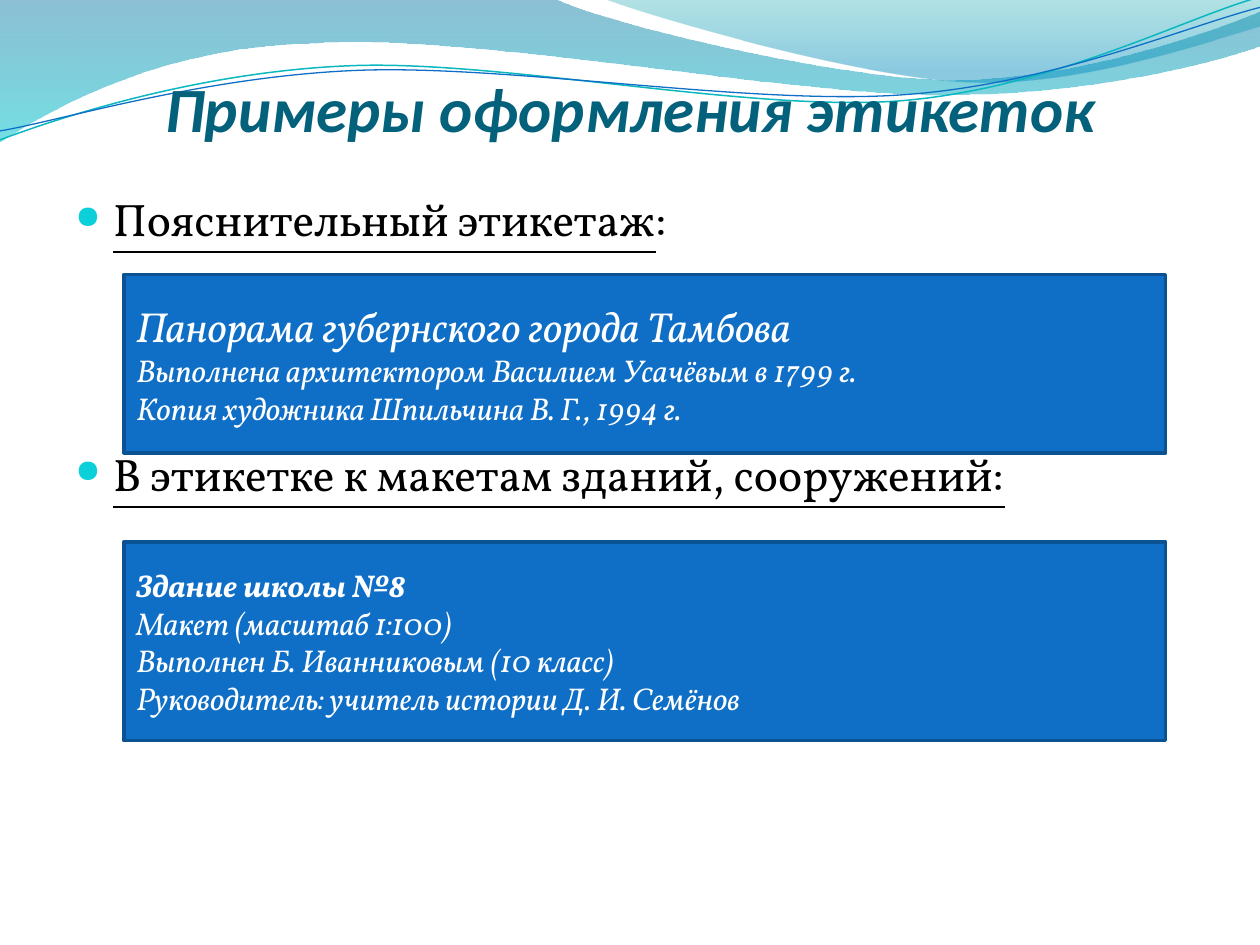
from lxml.etree import SubElement
from pptx import Presentation
from pptx.dml.color import RGBColor
from pptx.enum.shapes import MSO_SHAPE
from pptx.enum.text import MSO_ANCHOR, PP_ALIGN
from pptx.oxml.ns import qn
from pptx.oxml.xmlchemy import OxmlElement
from pptx.util import Cm, Pt

WHITE = RGBColor(0xFF, 0xFF, 0xFF)
BLACK = RGBColor(0x00, 0x00, 0x00)
TITLE = RGBColor(0x04, 0x61, 0x7B)
BLUE = RGBColor(0x0F, 0x6F, 0xC6)
NAVY = RGBColor(0x0B, 0x52, 0x92)
TEAL = RGBColor(0x0A, 0xB8, 0xBF)
DEEP = RGBColor(0x00, 0x74, 0xA1)
CYAN = RGBColor(0x00, 0xC6, 0xCF)
SEA = RGBColor(0x00, 0xA1, 0xA9)
SKY = RGBColor(0x00, 0x8B, 0xBF)
DOT = RGBColor(0x0B, 0xD0, 0xD9)
SERIF = "Vollkorn"
TILT = 357.3

WAVES = [
    ([(0, 0), (11.18, -0.03), (12.09, 0.43, 16.87, 1.6, 19.25, 1.6),
      (21.67, 1.6, 24.33, 0.66, 25.4, 0.23), (25.43, 0.91),
      (24.97, 1.12, 22.1, 1.93, 18.95, 1.91), (15.8, 1.91, 9.7, 0.71, 6.53, 0.86),
      (3.28, 0.91, 1.17, 2.11, -0.03, 2.87), (0, 0)],
     [(0, DEEP, 45), (1, CYAN, 55)]),
    ([(12.17, -0.03), (12.93, 0.28, 17.32, 1.57, 19.53, 1.65),
      (21.74, 1.75, 24.41, 0.81, 25.4, 0.53), (25.4, 0), (12.17, -0.03)],
     [(0, SEA, 30), (0.8, SKY, 45)]),
]
CURVES = [
    ([(-0.05, 2.22), (1.19, 1.82, 4.02, 1.04, 7.05, 1.06),
      (10.05, 1.07, 15.02, 2.37, 18.08, 2.29), (21.13, 2.2, 23.87, 0.91, 25.41, 0.55)],
     TEAL, 0.85),
    ([(-0.04, 2.04), (1.16, 1.9, 4.1, 1.14, 7.2, 1.16),
      (10.25, 1.18, 15.13, 2.25, 18.18, 2.17), (21.21, 2.1, 23.93, 1.06, 25.45, 0.75)],
     BLUE, 0.75),
]
TOPICS = [
    (0, [("Пояснительный этикетаж", True), (":", False)]),
    (114.5, [("В этикетке к макетам зданий, сооружений:", True)]),
]
SCHOOL = [
    ("Здание школы №8", 18, True),
    ("Макет (масштаб 1:100)", 18, False),
    ("Выполнен Б. Иванниковым (10 класс)", 18, False),
    ("Руководитель: учитель истории Д. И. Семёнов", 18, False),
]
TOWN = [
    ("Панорама губернского города Тамбова", 24, False),
    ("Выполнена архитектором Василием Усачёвым в 1799 г.", 18, False),
    ("Копия художника Шпильчина В. Г., 1994 г.", 18, False),
]


def outline(slide, left, top, segs, close):
    """Draw one freeform of lines and cubic curves from the given corner."""
    dots = [(Cm(left + seg[i]), Cm(top + seg[i + 1]))
            for seg in segs for i in range(0, len(seg), 2)]
    pen = slide.shapes.build_freeform(*dots[0])
    pen.add_line_segments(dots[1:], close=close)
    shape = pen.convert_to_shape()
    shape.shadow.inherit = False
    lines = iter(list(shape.element.iter(qn("a:lnTo"))))
    for seg in segs[1:]:
        group = [next(lines) for _ in range(len(seg) // 2)]
        if len(group) == 3:
            curve = OxmlElement("a:cubicBezTo")
            group[0].addprevious(curve)
            for line in group:
                curve.append(line[0])
                line.getparent().remove(line)
    return shape


def add_waves(slide, left, top):
    """Place the tinted waves and the thin curves of the header."""
    for segs, stops in WAVES:
        shape = outline(slide, left, top, segs, True)
        shape.line.fill.background()
        shape.fill.gradient()
        shape.fill.gradient_angle = 270
        for stop, (place, color, _) in zip(shape.fill.gradient_stops, stops):
            stop.position = place
            stop.color.rgb = color
        tints = list(shape.element.spPr.iter(qn("a:srgbClr")))
        for tint, (_, _, alpha) in zip(tints, stops):
            SubElement(tint, qn("a:alpha"), val=str(alpha * 1000))
    for segs, color, width in CURVES:
        shape = outline(slide, left, top, segs, False)
        shape.rotation = TILT
        shape.fill.background()
        shape.line.color.rgb = color
        shape.line.width = Pt(width)


def add_run(para, text, size, color, font=SERIF):
    """Append a run and return its font."""
    run = para.add_run()
    run.text = text
    run.font.name = font
    run.font.size = Pt(size)
    run.font.color.rgb = color
    return run.font


def add_title(slide, left, top, width, height):
    """Place the centred heading."""
    frame = slide.shapes.add_textbox(Cm(left), Cm(top), Cm(width), Cm(height)).text_frame
    frame.word_wrap = True
    frame.vertical_anchor = MSO_ANCHOR.BOTTOM
    frame.margin_left = frame.margin_right = frame.margin_bottom = 0
    para = frame.paragraphs[0]
    para.alignment = PP_ALIGN.CENTER
    font = add_run(para, "Примеры оформления этикеток", 36, TITLE, "Calibri")
    font.bold = font.italic = True


def add_topics(slide, left, top, width, height):
    """Place the bulleted topics, spaced to leave room for the labels."""
    frame = slide.shapes.add_textbox(Cm(left), Cm(top), Cm(width), Cm(height)).text_frame
    frame.word_wrap = True
    for i, (gap, runs) in enumerate(TOPICS):
        para = frame.add_paragraph() if i else frame.paragraphs[0]
        para.space_before = Pt(gap)
        props = para._p.get_or_add_pPr()
        props.set("marL", str(Cm(0.76)))
        props.set("indent", str(-Cm(0.76)))
        tint = SubElement(props, qn("a:buClr"))
        SubElement(tint, qn("a:srgbClr"), val=str(DOT))
        SubElement(props, qn("a:buSzPct"), val="70000")
        SubElement(props, qn("a:buChar"), char="●")
        for text, under in runs:
            add_run(para, text, 26, BLACK).underline = under


def add_label(slide, left, top, width, height, lines):
    """Place one blue museum label with its lines."""
    shape = slide.shapes.add_shape(
        MSO_SHAPE.RECTANGLE, Cm(left), Cm(top), Cm(width), Cm(height))
    shape.shadow.inherit = False
    shape.fill.solid()
    shape.fill.fore_color.rgb = BLUE
    shape.line.color.rgb = NAVY
    shape.line.width = Pt(2)
    frame = shape.text_frame
    frame.word_wrap = True
    frame.vertical_anchor = MSO_ANCHOR.MIDDLE
    for i, (text, size, bold) in enumerate(lines):
        para = frame.add_paragraph() if i else frame.paragraphs[0]
        para.alignment = PP_ALIGN.LEFT
        font = add_run(para, text, size, WHITE)
        font.bold = bold
        font.italic = True


def main():
    """Build and save the slide."""
    deck = Presentation()
    deck.slide_width, deck.slide_height = Cm(25.4), Cm(19.05)
    slide = deck.slides.add_slide(deck.slide_layouts[6])
    slide.background.fill.solid()
    slide.background.fill.fore_color.rgb = WHITE
    add_waves(slide, 0, 0)
    add_title(slide, 1.27, 1.32, 22.87, 1.6)
    add_topics(slide, 1.27, 3.73, 22.86, 13.84)
    add_label(slide, 2.5, 10.93, 21, 4, SCHOOL)
    add_label(slide, 2.5, 5.53, 21, 3.6, TOWN)
    deck.save("out.pptx")


if __name__ == "__main__":
    main()
